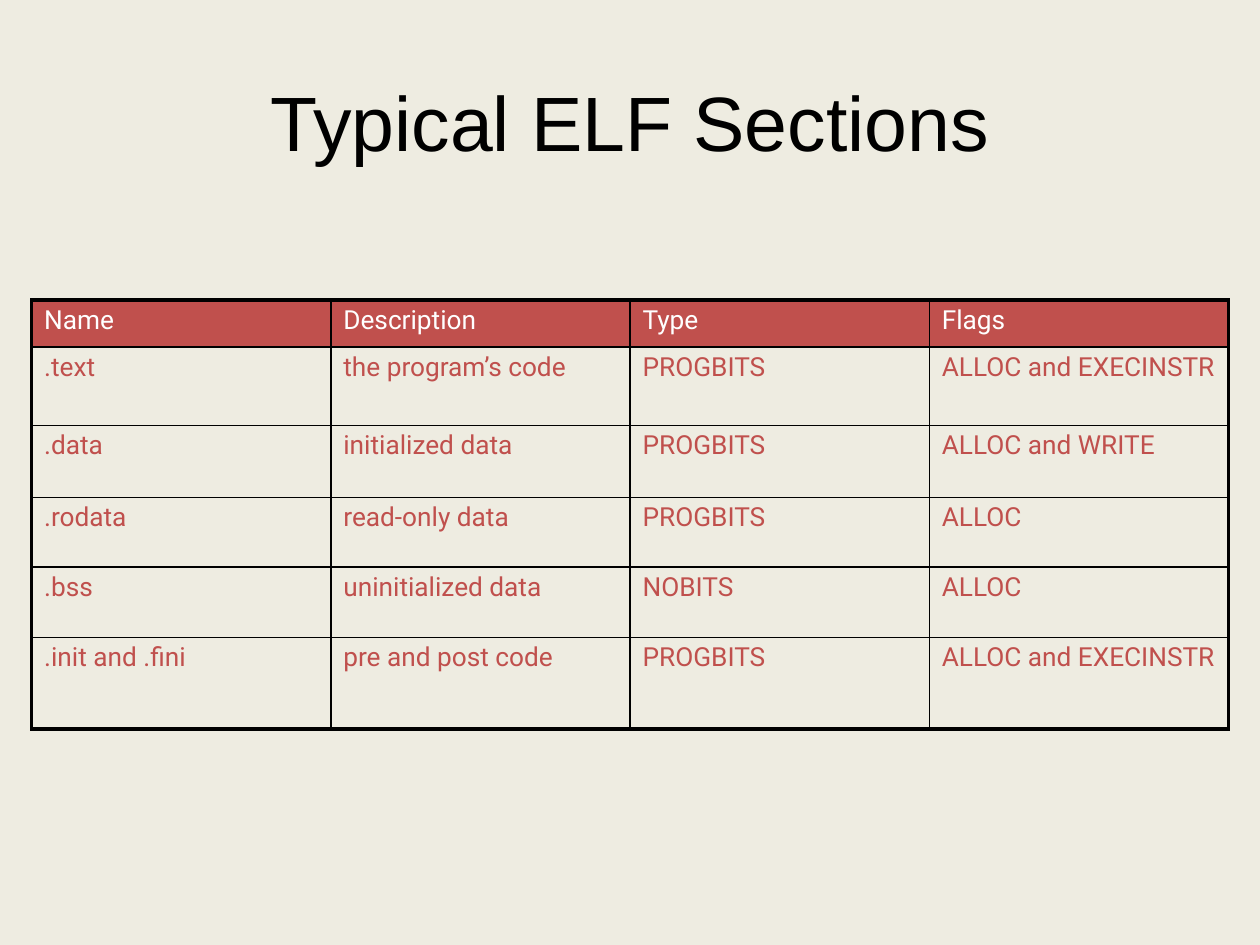
"""Build a slide with a table of typical ELF sections."""
from dataclasses import dataclass

from lxml import etree
from pptx import Presentation
from pptx import util as u
from pptx.dml.color import RGBColor
from pptx.enum import text
from pptx.oxml.ns import qn


@dataclass(frozen=True)
class Theme:
    background: str = "EEECE1"
    ink: str = "000000"
    accent: str = "C0504D"
    header_text: str = "FFFFFF"
    title_font: str = "Arial"
    table_font: str = "Roboto"
    title_size: float = 44
    table_size: float = 15
    outer_line: float = 2.25
    inner_line: float = 1


@dataclass(frozen=True)
class Section:
    name: str
    description: str
    type: str
    flags: str
    height: float

    def texts(self) -> tuple[str, ...]:
        return self.name, self.description, self.type, self.flags


THEME = Theme()
LEFT, WIDTH = u.Cm(0.64), u.Cm(24.13)
ROWS = [
    Section("Name", "Description", "Type", "Flags", 0.95),
    Section(".text", "the program’s code", "PROGBITS", "ALLOC and EXECINSTR", 1.58),
    Section(".data", "initialized data", "PROGBITS", "ALLOC and WRITE", 1.45),
    Section(".rodata", "read-only data", "PROGBITS", "ALLOC", 1.4),
    Section(".bss", "uninitialized data", "NOBITS", "ALLOC", 1.42),
    Section(".init and .fini", "pre and post code", "PROGBITS", "ALLOC and EXECINSTR", 1.85),
]


def write(tf, content: str, *, font: str, size: float, color: str,
          align=text.PP_ALIGN.LEFT) -> None:
    p = tf.paragraphs[0]
    p.alignment = align
    r = p.add_run()
    r.text = content
    r.font.name = font
    r.font.size = u.Pt(size)
    r.font.color.rgb = RGBColor.from_string(color)


def set_borders(cell, widths: dict[str, float], color: str) -> None:
    props = cell._tc.get_or_add_tcPr()
    for side, width in widths.items():
        ln = etree.SubElement(props, qn(f"a:ln{side}"), w=str(u.Pt(width)))
        fill = etree.SubElement(ln, qn("a:solidFill"))
        etree.SubElement(fill, qn("a:srgbClr"), val=color)


def add_title(s, content: str) -> None:
    tf = s.shapes.add_textbox(LEFT, u.Cm(0.43), WIDTH, u.Cm(4.01)).text_frame
    tf.word_wrap = True
    tf.vertical_anchor = text.MSO_ANCHOR.MIDDLE
    write(tf, content, font=THEME.title_font, size=THEME.title_size,
          color=THEME.ink, align=text.PP_ALIGN.CENTER)


def add_section_table(s, rows: list[Section]) -> None:
    n_rows, n_cols = len(rows), len(rows[0].texts())
    height = u.Cm(sum(row.height for row in rows))
    table = s.shapes.add_table(n_rows, n_cols, LEFT, u.Cm(6.05), WIDTH, height).table
    table.horz_banding = False
    for i, row in enumerate(rows):
        table.rows[i].height = u.Cm(row.height)
        for j, content in enumerate(row.texts()):
            cell = table.cell(i, j)
            cell.margin_left = cell.margin_right = u.Cm(0.25)
            cell.margin_top = cell.margin_bottom = u.Cm(0.1)
            edges = {"L": j == 0, "R": j == n_cols - 1, "T": i == 0, "B": i == n_rows - 1}
            set_borders(cell, {side: THEME.outer_line if outer else THEME.inner_line
                               for side, outer in edges.items()}, THEME.ink)
            if i == 0:
                cell.fill.solid()
                cell.fill.fore_color.rgb = RGBColor.from_string(THEME.accent)
            else:
                cell.fill.background()
            write(cell.text_frame, content, font=THEME.table_font, size=THEME.table_size,
                  color=THEME.accent if i else THEME.header_text)
            cell.text_frame.paragraphs[0].runs[0].font.bold = False


def main() -> None:
    prs = Presentation()
    prs.slide_width, prs.slide_height = u.Cm(25.4), u.Cm(19.05)
    s = prs.slides.add_slide(prs.slide_layouts[6])
    s.background.fill.solid()
    s.background.fill.fore_color.rgb = RGBColor.from_string(THEME.background)
    add_title(s, "Typical ELF Sections")
    add_section_table(s, ROWS)
    prs.save("out.pptx")


if __name__ == "__main__":
    main()
